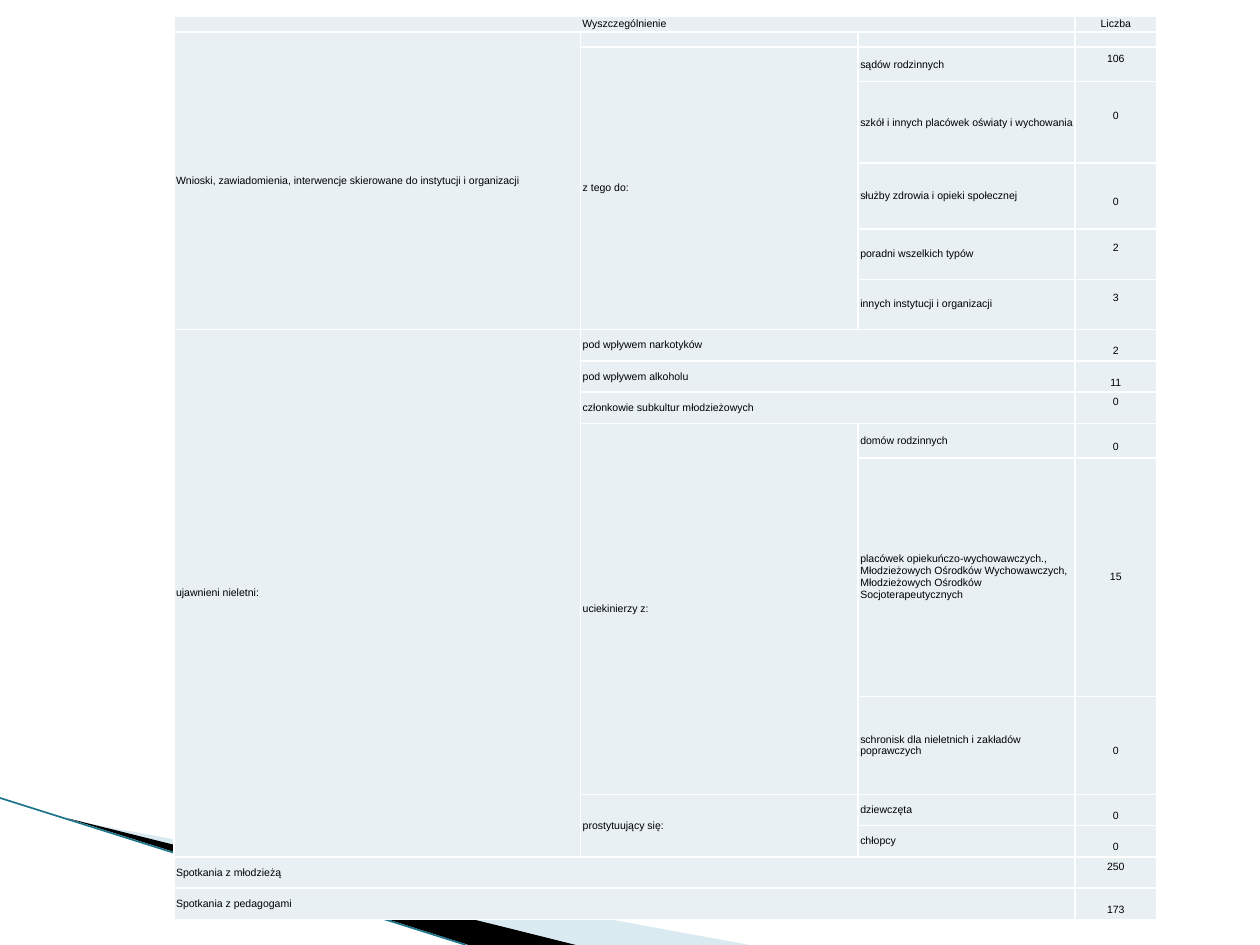
from lxml.etree import SubElement
from pptx import Presentation
from pptx.dml.color import RGBColor
from pptx.enum.shapes import MSO_CONNECTOR
from pptx.enum.text import MSO_ANCHOR, PP_ALIGN
from pptx.oxml.ns import qn
from pptx.util import Pt

BLACK = RGBColor(0x00, 0x00, 0x00)
WHITE = RGBColor(0xFF, 0xFF, 0xFF)
CELL = RGBColor(0xE8, 0xF0, 0xF4)
PALE_BLUE = RGBColor(0xA0, 0xCB, 0xDC)
TEAL = RGBColor(0x1B, 0x74, 0x89)

FONT = "Arial"
SIZE = 6
LINE = 6.9

COLS = [232.4, 158.6, 123.8, 46.8]
ROWS = [8.8, 8.8, 19.7, 46.6, 37.7, 28.7, 28.7, 17.9, 17.9, 17.9,
        19.7, 136.3, 56, 17.9, 17.9, 17.9, 17.9]

# Each label: row, column, rows spanned, columns spanned, text
LABELS = [
    (1, 0, 6, 1, "Wnioski, zawiadomienia, interwencje skierowane do instytucji i organizacji"),
    (2, 1, 5, 1, "z tego do:"),
    (2, 2, 1, 1, "sądów rodzinnych"),
    (3, 2, 1, 1, "szkół i innych placówek oświaty i wychowania"),
    (4, 2, 1, 1, "służby zdrowia i opieki społecznej"),
    (5, 2, 1, 1, "poradni wszelkich typów"),
    (6, 2, 1, 1, "innych instytucji i organizacji"),
    (7, 0, 8, 1, "ujawnieni nieletni:"),
    (7, 1, 1, 2, "pod wpływem narkotyków"),
    (8, 1, 1, 2, "pod wpływem alkoholu"),
    (9, 1, 1, 2, "członkowie subkultur młodzieżowych"),
    (10, 1, 3, 1, "uciekinierzy z:"),
    (10, 2, 1, 1, "domów rodzinnych"),
    (11, 2, 1, 1, "placówek opiekuńczo-wychowawczych., Młodzieżowych Ośrodków "
                  "Wychowawczych, Młodzieżowych Ośrodków Socjoterapeutycznych"),
    (12, 2, 1, 1, "schronisk dla nieletnich i zakładów poprawczych"),
    (13, 1, 2, 1, "prostytuujący się:"),
    (13, 2, 1, 1, "dziewczęta"),
    (14, 2, 1, 1, "chłopcy"),
    (15, 0, 1, 3, "Spotkania z młodzieżą"),
    (16, 0, 1, 3, "Spotkania z pedagogami"),
]
COUNTS = ["106", "0", "0", "2", "3", "2", "11", "0", "0", "15", "0", "0", "0", "250", "173"]
RAISED_ROWS = {2, 3, 5, 6, 9, 15}
CENTRED_ROWS = {11}


def add_wedge(s, points, color, opacity=100):
    """Draw a filled polygon without outline."""
    pts = [(Pt(x), Pt(y)) for x, y in points]
    builder = s.shapes.build_freeform(*pts[0])
    builder.add_line_segments(pts[1:], close=True)
    sp = builder.convert_to_shape()
    sp.shadow.inherit = False
    sp.line.fill.background()
    sp.fill.solid()
    sp.fill.fore_color.rgb = color
    if opacity < 100:
        clr = sp.fill._xPr.find(qn("a:solidFill"))[0]
        SubElement(clr, qn("a:alpha"), val=str(opacity * 1000))


def add_corner(s, x, y, h):
    """Draw the wedges and the line of the lower left corner."""
    bottom = y + h
    add_wedge(s, [(x + 39.6, y + 12.6), (x + 428.4, bottom), (x + 328.3, bottom)],
              PALE_BLUE, 40)
    add_wedge(s, [(x + 38.2, y + 11.5), (x + 329, bottom), (x + 267.8, bottom)], BLACK)
    ln = s.shapes.add_connector(MSO_CONNECTOR.STRAIGHT, Pt(x), Pt(y),
                                Pt(x + 266.4), Pt(bottom))
    ln.line.color.rgb = TEAL
    ln.line.width = Pt(0.95)
    SubElement(ln._element.spPr, qn("a:effectLst"))


def style_cell(cell):
    """Give a cell its fill, white borders and small empty line."""
    tcPr = cell._tc.get_or_add_tcPr()
    for side in ("a:lnL", "a:lnR", "a:lnT", "a:lnB"):
        ln = SubElement(tcPr, qn(side), w=str(Pt(1)))
        SubElement(SubElement(ln, qn("a:solidFill")), qn("a:srgbClr"), val=str(WHITE))
    cell.fill.solid()
    cell.fill.fore_color.rgb = CELL
    cell.vertical_anchor = MSO_ANCHOR.MIDDLE
    cell.margin_left = cell.margin_right = cell.margin_top = cell.margin_bottom = 0
    p = cell.text_frame.paragraphs[0]
    SubElement(p._p, qn("a:endParaRPr"), sz=str(SIZE * 100))


def write_cell(cell, text, align, left=0, top=0, bottom=0):
    """Write one run into a cell with the given insets."""
    cell.margin_left, cell.margin_top, cell.margin_bottom = Pt(left), Pt(top), Pt(bottom)
    p = cell.text_frame.paragraphs[0]
    p.alignment = align
    r = p.add_run()
    r.text = text
    r.font.name = FONT
    r.font.size = Pt(SIZE)
    r.font.color.rgb = BLACK


def add_counts_table(s, x, y):
    """Build the table of categories and counts."""
    frame = s.shapes.add_table(len(ROWS), len(COLS), Pt(x), Pt(y),
                               Pt(sum(COLS)), Pt(sum(ROWS)))
    table = frame.table
    table.first_row = table.horz_banding = False
    for column, width in zip(table.columns, COLS):
        column.width = Pt(width)
    for row, height in zip(table.rows, ROWS):
        row.height = Pt(height)
    for cell in table.iter_cells():
        style_cell(cell)

    table.cell(0, 0).merge(table.cell(0, 2))
    write_cell(table.cell(0, 0), "Wyszczególnienie", PP_ALIGN.CENTER)
    write_cell(table.cell(0, 3), "Liczba", PP_ALIGN.CENTER)
    for row, col, down, across, text in LABELS:
        cell = table.cell(row, col)
        if down * across > 1:
            cell.merge(table.cell(row + down - 1, col + across - 1))
        write_cell(cell, text, PP_ALIGN.LEFT, left=1.2, top=0.6, bottom=0.6)
    for row, text in enumerate(COUNTS, start=2):
        raised, centred = row in RAISED_ROWS, row in CENTRED_ROWS
        write_cell(table.cell(row, 3), text, PP_ALIGN.CENTER,
                   top=0 if raised or centred else LINE, bottom=LINE if raised else 0)


def main():
    """Build the slide and save it."""
    prs = Presentation()
    prs.slide_width, prs.slide_height = Pt(720), Pt(540)
    s = prs.slides.add_slide(prs.slide_layouts[6])
    add_corner(s, 0, 456, 84)
    add_counts_table(s, 99.4, 9.4)
    prs.save("out.pptx")


if __name__ == "__main__":
    main()
